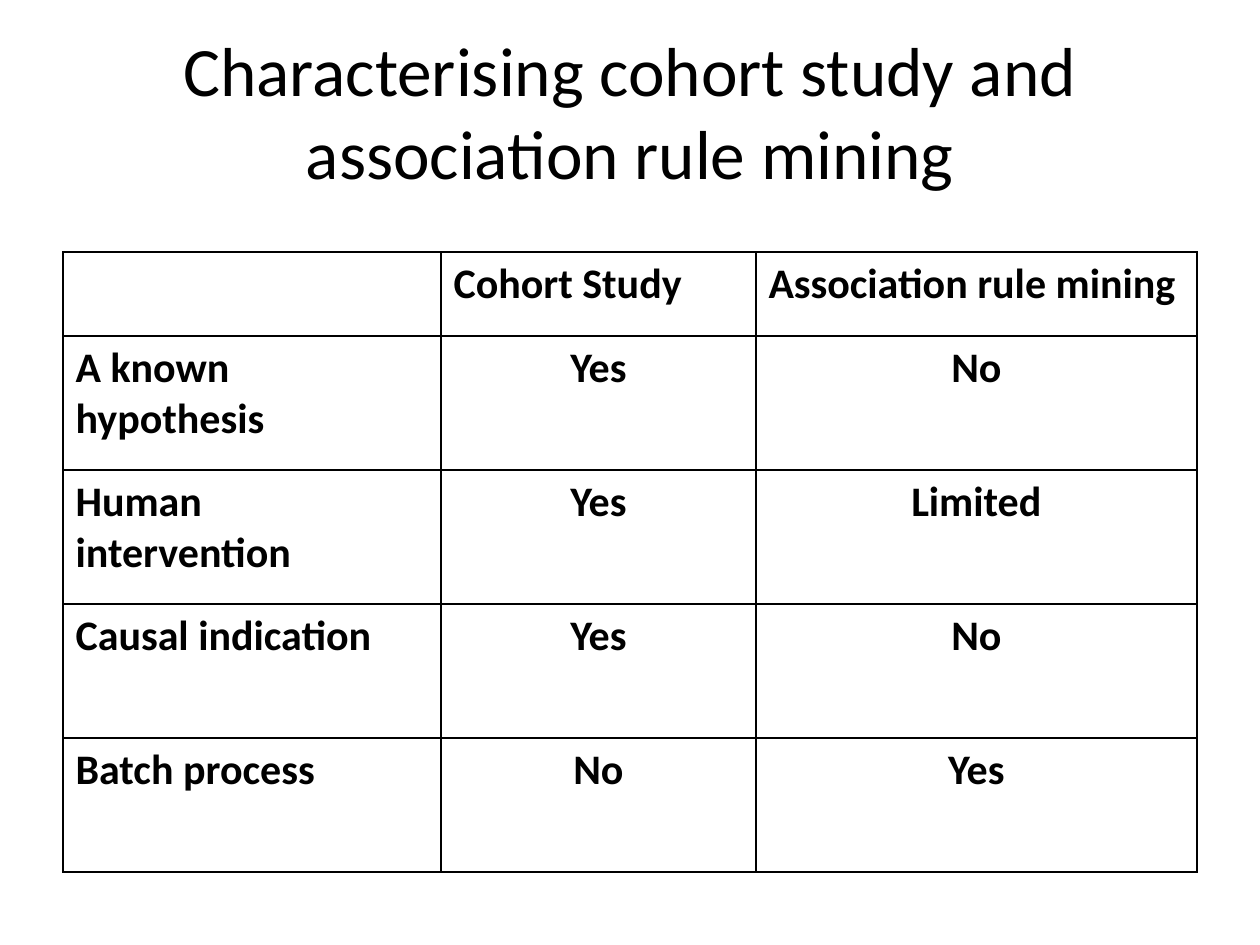
from lxml import etree
from pptx import Presentation
from pptx.dml.color import RGBColor
from pptx.enum.text import MSO_ANCHOR, MSO_AUTO_SIZE, PP_ALIGN
from pptx.oxml.ns import qn
from pptx.util import Pt

EMU_PER_PX = 914400 // 126
BLACK = RGBColor(0, 0, 0)
FONT = "Calibri"
TITLE = "Characterising cohort study and association rule mining"
COL_WIDTHS = [378, 315, 441]
ROW_HEIGHTS = [84] + [134] * 4
ROWS = [
    ["", "Cohort Study", "Association rule mining"],
    ["A known\nhypothesis", "Yes", "No"],
    ["Human\nintervention", "Yes", "Limited"],
    ["Causal indication", "Yes", "No"],
    ["Batch process", "No", "Yes"],
]


def px(n):
    return n * EMU_PER_PX


def style_text(tf, size, align, bold=False):
    for p in tf.paragraphs:
        p.alignment = align
        p.font.name = FONT
        p.font.size = Pt(size)
        p.font.bold = bold
        p.font.color.rgb = BLACK


def add_borders(cell):
    tc_pr = cell._tc.get_or_add_tcPr()
    for i, side in enumerate(("lnL", "lnR", "lnT", "lnB")):
        ln = etree.Element(qn(f"a:{side}"), w=str(Pt(1)))
        fill = etree.SubElement(ln, qn("a:solidFill"))
        etree.SubElement(fill, qn("a:srgbClr"), val=str(BLACK))
        tc_pr.insert(i, ln)


def set_title(slide):
    sp = slide.shapes.title
    sp.left, sp.top, sp.width, sp.height = map(px, (63, 32, 1134, 157))
    tf = sp.text_frame
    tf.text = TITLE
    tf.word_wrap = True
    tf.auto_size = MSO_AUTO_SIZE.NONE
    tf.vertical_anchor = MSO_ANCHOR.MIDDLE
    style_text(tf, 39.6, PP_ALIGN.CENTER)


def add_comparison_table(slide):
    box = map(px, (63, 252, sum(COL_WIDTHS), sum(ROW_HEIGHTS)))
    table = slide.shapes.add_table(len(ROWS), len(COL_WIDTHS), *box).table
    table.horz_banding = False
    table.first_row = False
    for col, width in zip(table.columns, COL_WIDTHS):
        col.width = px(width)
    for r, (row, height) in enumerate(zip(ROWS, ROW_HEIGHTS)):
        table.rows[r].height = px(height)
        for c, text in enumerate(row):
            cell = table.cell(r, c)
            cell.text = text
            cell.fill.background()
            align = PP_ALIGN.CENTER if r and c else PP_ALIGN.LEFT
            style_text(cell.text_frame, 24, align, bold=True)
            add_borders(cell)


def main():
    prs = Presentation()
    prs.slide_width, prs.slide_height = px(1260), px(945)
    slide = prs.slides.add_slide(prs.slide_layouts[5])
    set_title(slide)
    add_comparison_table(slide)
    prs.save("out.pptx")


if __name__ == "__main__":
    main()
